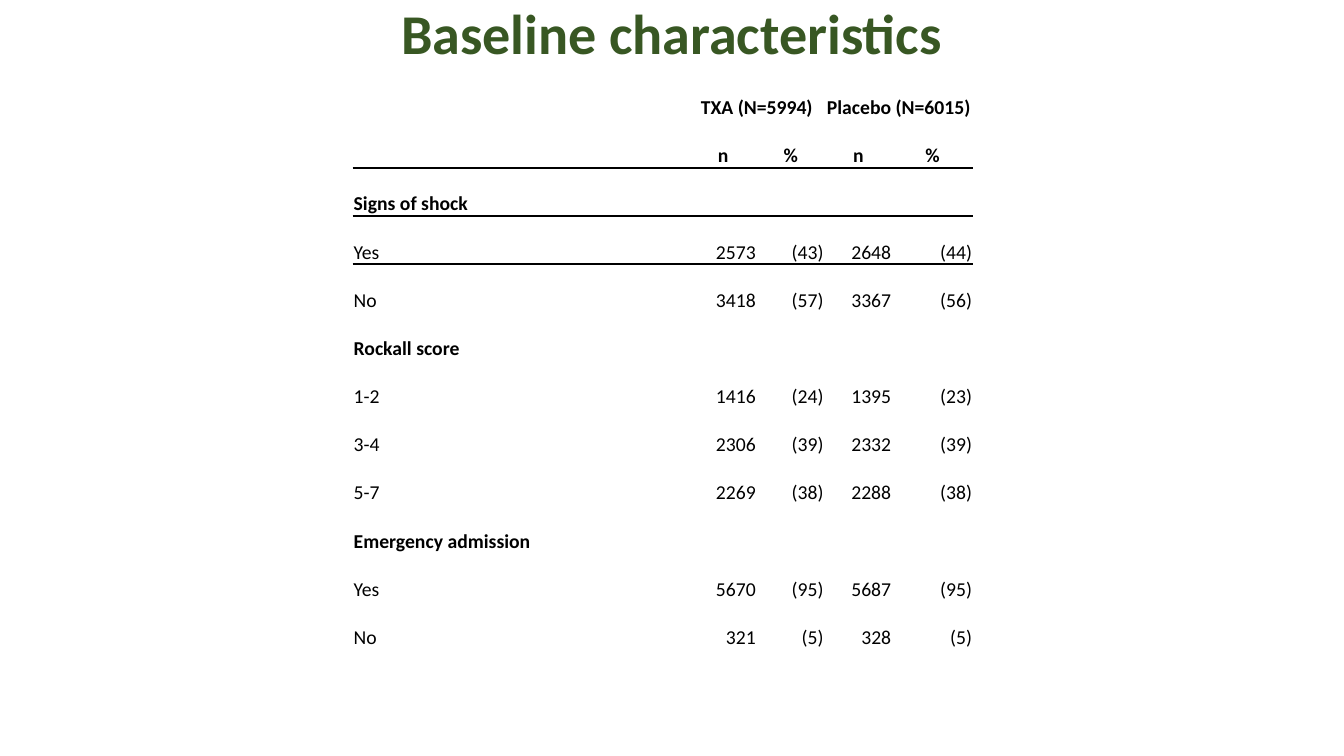
import pptx
import pptx.util
import pptx.dml.color
import pptx.enum.text
import pptx.oxml
import pptx.oxml.ns

TITLE = "Baseline characteristics"
ROWS = [
    ("", "TXA (N=5994)", "", "Placebo (N=6015)", ""),
    ("", "n", "%", "n", "%"),
    ("Signs of shock",),
    ("Yes", "2573", "(43)", "2648", "(44)"),
    ("No", "3418", "(57)", "3367", "(56)"),
    ("Rockall score",),
    ("1-2", "1416", "(24)", "1395", "(23)"),
    ("3-4", "2306", "(39)", "2332", "(39)"),
    ("5-7", "2269", "(38)", "2288", "(38)"),
    ("Emergency admission",),
    ("Yes", "5670", "(95)", "5687", "(95)"),
    ("No", "321", "(5)", "328", "(5)"),
]
HEADS = 2
RULES = {1: 1, 2: 1.5}  # row above the rule: width in points
COLS = [3.33, 0.67, 0.67, 0.67, 0.8]
WIDE, HIGH = 13.3, 7.48
LEFT, TOP, TALL = 3.49, 0.71, 5.72
COLORS = {"title": "385723", "text": "000000"}
FONT = "Calibri"
PLAIN = "{2D5ABB26-0587-4C30-8999-92F81FD0307C}"

Inches, Pt = pptx.util.Inches, pptx.util.Pt
ALIGN = pptx.enum.text.PP_ALIGN
ANCHOR = pptx.enum.text.MSO_ANCHOR
INSETS = {"margin_left": Inches(0.01), "margin_right": Inches(0.01),
          "margin_top": Inches(0.01), "margin_bottom": 0,
          "vertical_anchor": ANCHOR.BOTTOM}


def apply(item, values):
    for name, value in values.items():
        setattr(item, name, value)


def write(frame, text, size, bold, color, align):
    para = frame.paragraphs[0]
    para.alignment = align
    apply(para.font, {"size": Pt(size), "name": FONT})
    if text:
        run = para.add_run()
        run.text = text
        apply(run.font, {"size": Pt(size), "bold": bold, "name": FONT})
        run.font.color.rgb = pptx.dml.color.RGBColor.from_string(COLORS[color])


def rule(cell, side, width):
    """Draw one border; it has to come before the cell's fill."""
    line = pptx.oxml.parse_xml(
        f'<a:{side} {pptx.oxml.ns.nsdecls("a")} w="{int(Pt(width))}">'
        f'<a:solidFill><a:srgbClr val="{COLORS["text"]}"/></a:solidFill></a:{side}>')
    props = cell._tc.get_or_add_tcPr()
    props.insert(len(props.findall(pptx.oxml.ns.qn("a:lnT"))), line)


def add_title(slide):
    box = slide.shapes.add_textbox(
        Inches(0.91), 0, Inches(11.47), Inches(TOP))
    frame = box.text_frame
    apply(frame, {"word_wrap": True, "vertical_anchor": ANCHOR.MIDDLE})
    write(frame, TITLE, 40, True, "title", ALIGN.CENTER)
    frame.paragraphs[0].line_spacing = 0.9


def add_grid(slide):
    table = slide.shapes.add_table(
        len(ROWS), len(COLS), Inches(LEFT), Inches(TOP),
        Inches(sum(COLS)), Inches(TALL)).table
    apply(table, {"first_row": False, "horz_banding": False})
    table._tbl.tblPr[0].text = PLAIN
    for col, width in zip(table.columns, COLS):
        col.width = Inches(width)

    for r, texts in enumerate(ROWS):
        group = len(texts) == 1
        for c in range(len(COLS)):
            cell = table.cell(r, c)
            apply(cell, INSETS)
            cell.fill.background()
            text = texts[c] if c < len(texts) else ""
            align = (ALIGN.LEFT if c == 0 else
                     ALIGN.CENTER if r < HEADS else ALIGN.RIGHT)
            write(cell.text_frame, text, 14, group or r < HEADS, "text", align)
            if r - 1 in RULES:
                rule(cell, "lnT", RULES[r - 1])
            if r in RULES:
                rule(cell, "lnB", RULES[r])
        if group:
            table.cell(r, 0).merge(table.cell(r, len(COLS) - 1))
    for c in (1, 3):
        table.cell(0, c).merge(table.cell(0, c + 1))


def main():
    deck = pptx.Presentation()
    apply(deck, {"slide_width": Inches(WIDE), "slide_height": Inches(HIGH)})
    slide = deck.slides.add_slide(deck.slide_layouts[6])
    add_grid(slide)
    add_title(slide)
    deck.save("out.pptx")


if __name__ == "__main__":
    main()
